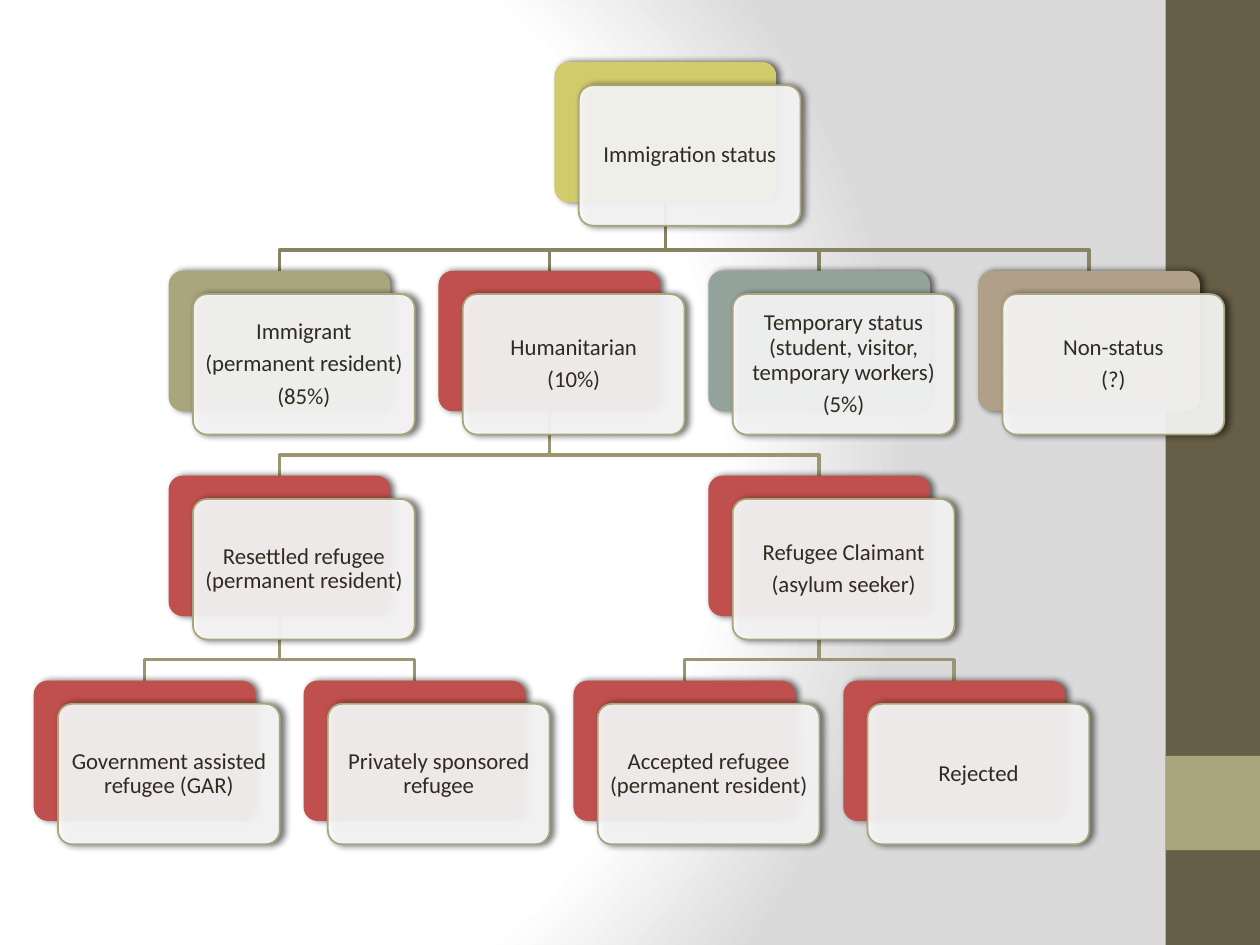
from pptx import Presentation
from pptx.dml.color import RGBColor
from pptx.enum.shapes import MSO_SHAPE as Shape
from pptx.enum.text import MSO_ANCHOR as Anchor, PP_ALIGN as Align
from pptx.oxml import parse_xml
from pptx.oxml.ns import nsdecls
from pptx.util import Cm, Pt

COLORS = {
    "brown": "675E47", "olive": "A9A57C", "yellow": "D2CB6C", "red": "C0504D",
    "teal": "95A39D", "tan": "B1A089", "white": "FFFFFF", "gray": "DADADA",
    "text": "2F2B20", "link_top": "878463", "link": "999671", "black": "000000",
}

# key: (parent, level, column in half steps, colour, paragraphs)
NODES = {
    "status": (None, 0, 3.86, "yellow", ["Immigration status"]),
    "immigrant": ("status", 1, 1, "olive",
                  ["Immigrant", "(permanent resident)", "(85%)"]),
    "humanitarian": ("status", 1, 3, "red", ["Humanitarian", "(10%)"]),
    "resettled": ("humanitarian", 2, 1, "red",
                  ["Resettled refugee (permanent resident)"]),
    "government": ("resettled", 3, 0, "red",
                   ["Government assisted refugee (GAR)"]),
    "private": ("resettled", 3, 2, "red", ["Privately sponsored refugee"]),
    "claimant": ("humanitarian", 2, 5, "red",
                 ["Refugee Claimant", "(asylum seeker)"]),
    "accepted": ("claimant", 3, 4, "red",
                 ["Accepted refugee (permanent resident)"]),
    "rejected": ("claimant", 3, 6, "red", ["Rejected"]),
    "temporary": ("status", 1, 5, "teal",
                  ["Temporary status (student, visitor, temporary workers)",
                   "(5%)"]),
    "none": ("status", 1, 7, "tan", ["Non-status", "(?)"]),
}

# Layout, in cm
LEFT, HALF_STEP = 0.68, 2.72
TOPS = [1.25, 5.46, 9.59, 13.72]
BOX_W, BOX_H = 4.47, 2.83
SHIFT_X, SHIFT_Y = 0.49, 0.47
BEND = 0.42
INSET = Cm(0.13)


def rgb(name):
    return RGBColor.from_string(COLORS[name])


def add_box(kind, x, y, w, h, color):
    sp = slide.shapes.add_shape(kind, Cm(x), Cm(y), Cm(w), Cm(h))
    sp.shadow.inherit = False
    sp.fill.solid()
    sp.fill.fore_color.rgb = rgb(color)
    sp.line.fill.background()
    return sp


def add_round_box(x, y, color):
    sp = add_box(Shape.ROUNDED_RECTANGLE, x, y, BOX_W, BOX_H, color)
    sp.adjustments[0] = 0.1
    effects = sp.element.spPr.find("{*}effectLst")
    effects.append(parse_xml(
        f'<a:outerShdw {nsdecls("a")} blurRad="{Pt(4)}" dist="{Pt(2)}" dir="0" '
        f'rotWithShape="0"><a:srgbClr val="{COLORS["black"]}">'
        '<a:alpha val="60000"/></a:srgbClr></a:outerShdw>'))
    return sp


def add_card(x, y, paragraphs):
    sp = add_round_box(x, y, "white")
    color = sp.element.spPr.find("{*}solidFill")[0]
    color.append(parse_xml(f'<a:alpha {nsdecls("a")} val="90000"/>'))
    sp.line.color.rgb = rgb("olive")
    sp.line.width = Pt(1)
    tf = sp.text_frame
    tf.word_wrap = True
    tf.vertical_anchor = Anchor.MIDDLE
    tf.margin_left = tf.margin_right = tf.margin_top = tf.margin_bottom = INSET
    tf.text = "\n".join(paragraphs)
    for p in tf.paragraphs:
        p.alignment = Align.CENTER
        p.line_spacing = 0.9
        p.space_after = Pt(4.5)
        font = p.runs[0].font
        font.name = "Calibri"
        font.size = Pt(13)
        font.color.rgb = rgb("text")


def add_link(parent, child):
    (x1, y1), (x2, y2) = corner(parent), corner(child)
    x1, x2, y1 = x1 + BOX_W / 2, x2 + BOX_W / 2, y1 + BOX_H
    points = [(x1, y2 - BEND), (x2, y2 - BEND), (x2, y2)]
    builder = slide.shapes.build_freeform(Cm(x1), Cm(y1))
    builder.add_line_segments([(Cm(x), Cm(y)) for x, y in points], close=False)
    sp = builder.convert_to_shape()
    sp.shadow.inherit = False
    sp.fill.background()
    sp.line.color.rgb = rgb("link_top" if parent == "status" else "link")
    sp.line.width = Pt(2)


def corner(key):
    level, column = NODES[key][1:3]
    return LEFT + column * HALF_STEP, TOPS[level]


prs = Presentation()
prs.slide_width, prs.slide_height = Cm(25.4), Cm(19.05)
slide = prs.slides.add_slide(prs.slide_layouts[6])

# Background glow
stops = "".join(
    f'<a:gs pos="{pos * 1000}"><a:srgbClr val="{COLORS[name]}"/></a:gs>'
    for pos, name in [(0, "white"), (75, "white"), (100, "gray")])
slide.element.cSld.insert(0, parse_xml(
    f'<p:bg {nsdecls("p", "a")}><p:bgPr><a:gradFill rotWithShape="1">'
    f'<a:gsLst>{stops}</a:gsLst><a:path path="circle">'
    '<a:fillToRect l="20000" t="50000" r="100000" b="50000"/></a:path>'
    '</a:gradFill><a:effectLst/></p:bgPr></p:bg>'))

# Side band
add_box(Shape.RECTANGLE, 23.5, 0, 1.9, 19.05, "brown")
add_box(Shape.RECTANGLE, 23.5, 15.24, 1.9, 1.9, "olive")

# Links behind the boxes
for key, (parent, *_) in NODES.items():
    if parent:
        add_link(parent, key)

# Coloured boxes with their cards
for key, (_, _, _, color, paragraphs) in NODES.items():
    x, y = corner(key)
    add_round_box(x, y, color)
    add_card(x + SHIFT_X, y + SHIFT_Y, paragraphs)

prs.save("out.pptx")
